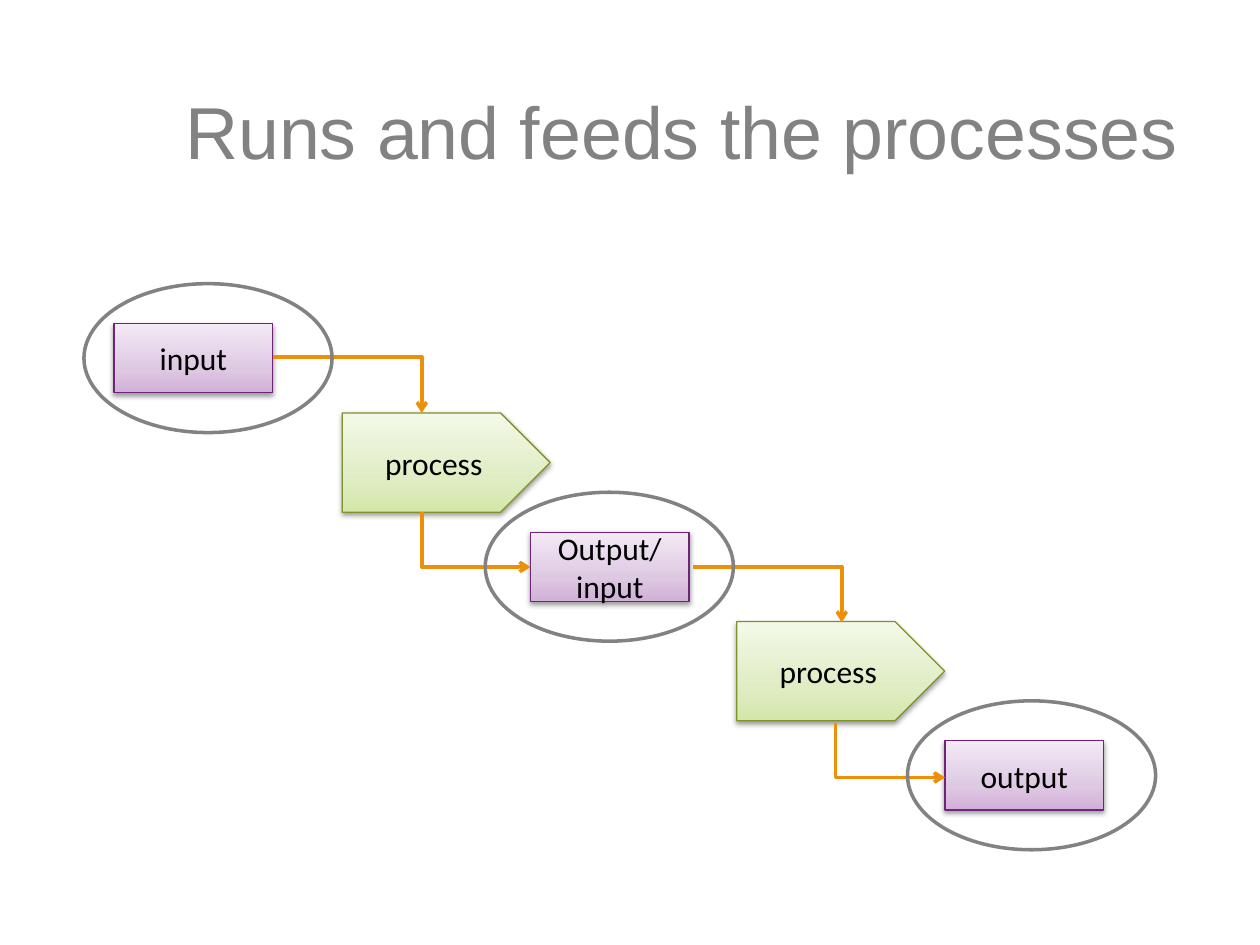
"""Build the slide that shows how runs feed the processes."""
from dataclasses import dataclass

from lxml.etree import SubElement
from pptx import Presentation
from pptx.dml.color import RGBColor
from pptx.enum.shapes import MSO_CONNECTOR as Connector, MSO_SHAPE as Shape
from pptx.enum.text import MSO_ANCHOR as Anchor, MSO_AUTO_SIZE as AutoSize, PP_ALIGN as Align
from pptx.oxml.ns import qn
from pptx.util import Pt


@dataclass(frozen=True)
class Theme:
    grey: str = "828282"
    black: str = "000000"
    orange: str = "EC900A"
    purple_line: str = "702479"
    purple_stops: tuple = ((0, "D2B0D8"), (35, "DEC9E3"), (100, "F3EAF5"))
    green_line: str = "7E9328"
    green_stops: tuple = ((0, "D4E7AA"), (35, "E0EDC4"), (100, "F3F9E8"))
    title_font: str = "Arial"
    label_font: str = "Calibri"
    title_size: float = 42
    label_size: float = 18
    thin: float = 0.75
    thick: float = 2


@dataclass(frozen=True)
class BoxStyle:
    outline: Shape
    width: float
    height: float
    stops: tuple
    line: str


@dataclass(frozen=True)
class Box:
    text: str
    left: float
    top: float
    style: BoxStyle


@dataclass(frozen=True)
class Arrow:
    start: tuple
    end: tuple
    down_first: bool


THEME = Theme()
DATA = BoxStyle(Shape.RECTANGLE, 90.7, 39.6, THEME.purple_stops, THEME.purple_line)
PROCESS = BoxStyle(Shape.PENTAGON, 118.8, 56.7, THEME.green_stops, THEME.green_line)
ROW_STEP = 119.2
DATA_TOP, PROCESS_TOP, RING_TOP = 184.9, 236, 162.1
RING_WIDTH, RING_HEIGHT = 141.8, 85.1

BOXES = [
    Box(text, left, DATA_TOP + row * ROW_STEP, DATA)
    for row, (text, left) in enumerate([("input", 65.2), ("Output/\ninput", 303.1), ("output", 540)])
] + [
    Box("process", left, PROCESS_TOP + row * ROW_STEP, PROCESS)
    for row, left in enumerate([195.6, 421])
]
ARROWS = [
    Arrow((156, 204), (241, 236), False),
    Arrow((241, 292.7), (303.1, 324), True),
    Arrow((396, 324), (481, 355.7), False),
    Arrow((477.5, 413.3), (540, 444.3), True),
]
RING_LEFTS = (48, 277.3, 518.6)


def color(value: str) -> RGBColor:
    """Turn a hex value into a colour."""
    return RGBColor.from_string(value)


def write_text(shape, text: str, *, font: str, size: float, ink: str, align: Align) -> None:
    """Write each line of text as a paragraph in the given format."""
    frame = shape.text_frame
    frame.word_wrap = True
    frame.auto_size = AutoSize.NONE
    frame.vertical_anchor = Anchor.MIDDLE
    frame.text = text
    for paragraph in frame.paragraphs:
        paragraph.alignment = align
        paragraph.font.name = font
        paragraph.font.size = Pt(size)
        paragraph.font.color.rgb = color(ink)


def set_line(line, ink: str, width: float) -> None:
    """Give a line its colour and width."""
    line.color.rgb = color(ink)
    line.width = Pt(width)


def add_color_element(parent, value: str):
    """Append a colour element to a parent element."""
    return SubElement(parent, qn("a:srgbClr"), val=value)


def fill_gradient(shape, stops: tuple) -> None:
    """Fill a shape with stops that run from bottom to top."""
    shape.fill.gradient()
    shape.fill.gradient_angle = 90
    stop_list = next(shape.element.iter(qn("a:gsLst")))
    for stop in list(stop_list):
        stop_list.remove(stop)
    for position, value in stops:
        add_color_element(SubElement(stop_list, qn("a:gs"), pos=str(position * 1000)), value)


def add_shadow(shape) -> None:
    """Drop a soft shadow below a shape."""
    shape.shadow.inherit = False
    effects = next(shape.element.iter(qn("a:effectLst")))
    shadow = SubElement(effects, qn("a:outerShdw"), blurRad=str(Pt(3.1)), dist=str(Pt(1.6)),
                        dir="5400000", rotWithShape="0")
    SubElement(add_color_element(shadow, THEME.black), qn("a:alpha"), val="38000")


def add_box(slide, box: Box) -> None:
    """Draw a labelled data or process box."""
    style = box.style
    shape = slide.shapes.add_shape(style.outline, Pt(box.left), Pt(box.top),
                                   Pt(style.width), Pt(style.height))
    fill_gradient(shape, style.stops)
    set_line(shape.line, style.line, THEME.thin)
    add_shadow(shape)
    write_text(shape, box.text, font=THEME.label_font, size=THEME.label_size,
               ink=THEME.black, align=Align.CENTER)


def add_arrow(slide, arrow: Arrow) -> None:
    """Draw a connector with one bend and an open arrowhead."""
    (x1, y1), (x2, y2) = arrow.start, arrow.end
    if arrow.down_first:
        middle_x, middle_y = (x1 + x2) / 2, (y1 + y2) / 2
        half_width, half_height = (y2 - y1) / 2, (x2 - x1) / 2
        x1, x2 = middle_x + half_width, middle_x - half_width
        y1, y2 = middle_y - half_height, middle_y + half_height
    connector = slide.shapes.add_connector(Connector.ELBOW, Pt(x1), Pt(y1), Pt(x2), Pt(y2))
    set_line(connector.line, THEME.orange, THEME.thick)
    element = connector.element
    next(element.iter(qn("a:prstGeom"))).set("prst", "bentConnector2")
    if arrow.down_first:
        next(element.iter(qn("a:xfrm"))).set("rot", "16200000")
    SubElement(next(element.iter(qn("a:ln"))), qn("a:tailEnd"), type="arrow")
    SubElement(next(element.iter(qn("p:spPr"))), qn("a:effectLst"))


def add_ring(slide, left: float, top: float) -> None:
    """Draw an unfilled ellipse around a data box."""
    ring = slide.shapes.add_shape(Shape.OVAL, Pt(left), Pt(top), Pt(RING_WIDTH), Pt(RING_HEIGHT))
    ring.fill.background()
    set_line(ring.line, THEME.grey, THEME.thick)
    ring.shadow.inherit = False


def main() -> None:
    """Build and save the presentation."""
    presentation = Presentation()
    presentation.slide_width, presentation.slide_height = Pt(720), Pt(540)
    slide = presentation.slides.add_slide(presentation.slide_layouts[5])
    title = slide.shapes.title
    title.left, title.top, title.width, title.height = Pt(98.6), Pt(29.5), Pt(585.4), Pt(90)
    write_text(title, "Runs and feeds the processes", font=THEME.title_font,
               size=THEME.title_size, ink=THEME.grey, align=Align.LEFT)
    for box in BOXES:
        add_box(slide, box)
    for arrow in ARROWS:
        add_arrow(slide, arrow)
    for row, left in enumerate(RING_LEFTS):
        add_ring(slide, left, RING_TOP + row * ROW_STEP)
    presentation.save("out.pptx")


if __name__ == "__main__":
    main()
